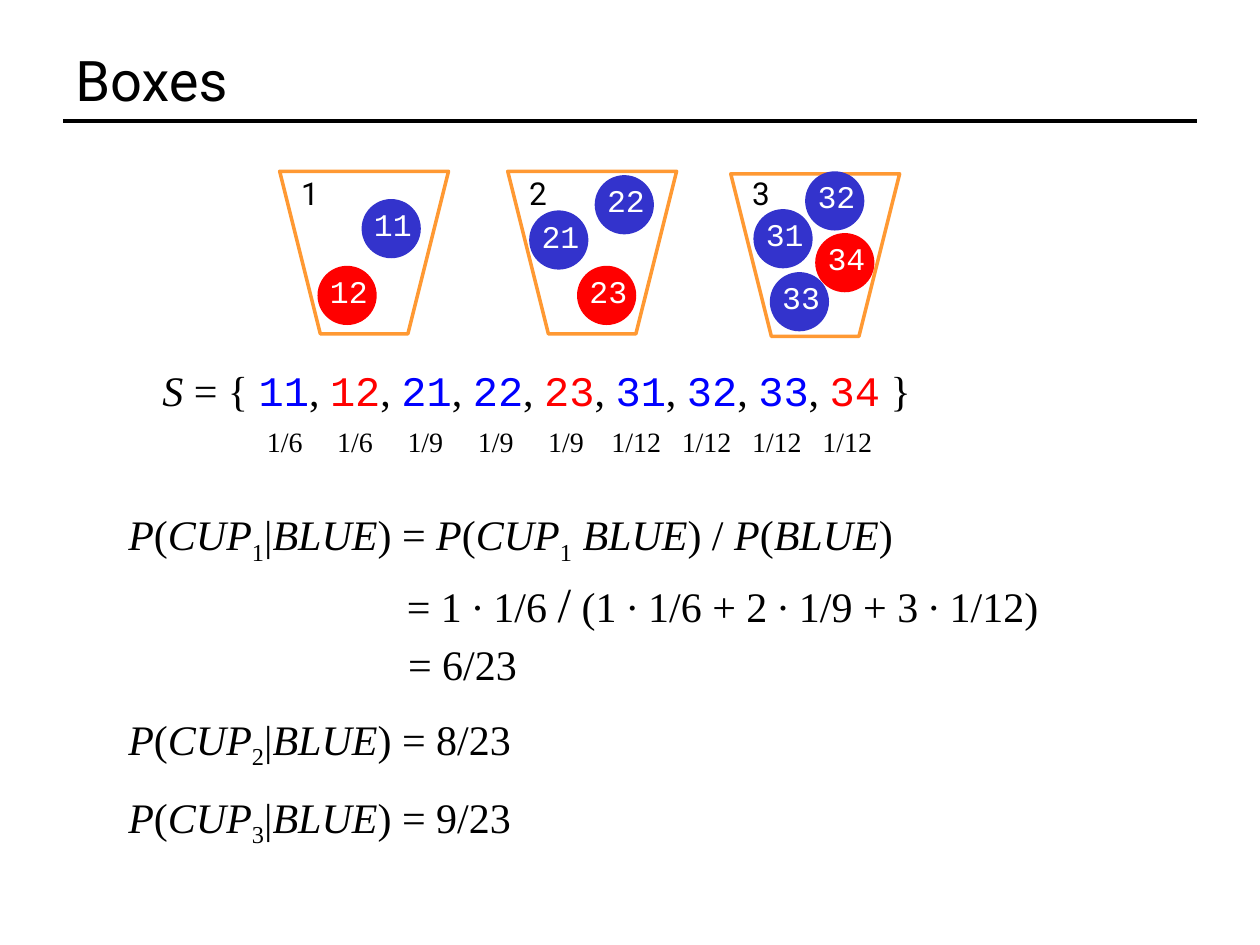
import pptx
import pptx.dml.color
import pptx.enum.shapes
import pptx.enum.text
import pptx.oxml.ns
import pptx.util
from lxml import etree

COLUMNS, ROWS = 100, 75
UNIT = pptx.util.Inches(0.1)
SANS, SERIF, MONO = "Roboto", "Times New Roman", "Courier New"
BLACK, WHITE, ORANGE = "000000", "FFFFFF", "FF9933"
BALL_RED, BALL_BLUE, TEXT_RED, TEXT_BLUE = "FF0000", "3333CC", "FF0000", "0000FF"
BALL_SIZE = 4.7

CUPS = [
    (22.2, 13.6, [("11", 28.7, 15.8, False), ("12", 25.2, 21.1, True)]),
    (40.3, 13.6, [("21", 42.0, 16.7, False), ("22", 47.2, 13.9, False),
                  ("23", 45.8, 21.1, True)]),
    (58.0, 13.8, [("31", 59.8, 16.6, False), ("32", 63.9, 13.6, False),
                  ("33", 61.1, 21.6, False), ("34", 64.7, 18.5, True)]),
]


def colour(code):
    return pptx.dml.color.RGBColor.from_string(code)


def grid(*lengths):
    return [round(length * UNIT) for length in lengths]


def add_span(para, text, size=24, font=SERIF, code=BLACK, italic=False, base=None):
    span = para.add_run()
    span.text = text
    span.font.size = pptx.util.Pt(size)
    span.font.name = font
    span.font.italic = italic
    span.font.color.rgb = colour(code)
    if base:
        span.font._element.set("baseline", str(base * 1000))


def add_text(page, place, spans):
    box = page.shapes.add_textbox(*grid(*place))
    frame = box.text_frame
    frame.word_wrap = False
    frame.auto_size = pptx.enum.text.MSO_AUTO_SIZE.SHAPE_TO_FIT_TEXT
    for text, style in spans:
        add_span(frame.paragraphs[0], text, **style)
    return box


def add_figure(page, kind, place, fill=None, line=None):
    figure = page.shapes.add_shape(kind, *grid(*place))
    figure.shadow.inherit = False
    if fill:
        figure.fill.solid()
        figure.fill.fore_color.rgb = colour(fill)
    else:
        figure.fill.background()
    if line:
        figure.line.color.rgb = colour(line)
        figure.line.width = pptx.util.Pt(2)
    else:
        figure.line.fill.background()
    return figure


def add_title(page, text):
    box = page.shapes.add_textbox(*grid(5, 3, 90, 6.6))
    box.text_frame.word_wrap = True
    box.text_frame.vertical_anchor = pptx.enum.text.MSO_ANCHOR.MIDDLE
    add_span(box.text_frame.paragraphs[0], text, 32, SANS)
    rule = page.shapes.add_connector(
        pptx.enum.shapes.MSO_CONNECTOR.STRAIGHT, *grid(5, 9.6, 95, 9.6))
    rule.line.color.rgb = colour(BLACK)
    rule.line.width = pptx.util.Pt(2)
    etree.SubElement(rule._element.spPr, pptx.oxml.ns.qn("a:effectLst"))


def add_cup(page, number, left, top, balls):
    shapes = pptx.enum.shapes.MSO_SHAPE
    cup = add_figure(page, shapes.TRAPEZOID, (left, top, 13.4, 12.9), line=ORANGE)
    cup._element.spPr.xfrm.set("flipV", "1")
    for label, column, row, red in balls:
        add_figure(page, shapes.OVAL, (column, row, BALL_SIZE, BALL_SIZE),
                   fill=BALL_RED if red else BALL_BLUE)
        add_text(page, (column, row, 5, 4),
                 [(label, dict(size=18, font=MONO, code=WHITE))])
    tag = add_figure(page, shapes.OVAL, (left - 0.1, 12.8, 5, 5))
    tag.text_frame.word_wrap = False
    tag.text_frame.vertical_anchor = pptx.enum.text.MSO_ANCHOR.MIDDLE
    para = tag.text_frame.paragraphs[0]
    para.alignment = pptx.enum.text.PP_ALIGN.CENTER
    add_span(para, str(number), 18, SANS)


def add_sample_space(page):
    outcomes = [(label, red, len(balls))
                for _, _, balls in CUPS for label, _, _, red in balls]
    spans = [("S", dict(italic=True)), (" = { ", {})]
    for index, (label, red, count) in enumerate(outcomes):
        if index:
            spans.append((", ", {}))
        spans.append((label, dict(font=MONO, code=TEXT_RED if red else TEXT_BLUE)))
        chance = f"1/{len(CUPS) * count}"
        width = 5.2 if len(chance) == 3 else 6.3
        center = 22.8 + 5.58 * index
        add_text(page, (center - width / 2, 33.2, width, 3.7),
                 [(chance, dict(size=16))])
    spans.append((" }", {}))
    add_text(page, (11.9, 28.4, 61.7, 5), spans)


def cup_event(number):
    return [("P", dict(italic=True)), ("(", {}), ("CUP", dict(italic=True)),
            (str(number), dict(base=-25))]


def given_blue(number, ending):
    return cup_event(number) + [("|", {}), ("BLUE", dict(italic=True)), (ending, {})]


def add_formulas(page):
    joint = cup_event(1) + [
        (" BLUE", dict(italic=True)), (") / ", {}), ("P", dict(italic=True)),
        ("(", {}), ("BLUE", dict(italic=True)), (")", {})]
    add_text(page, (9.2, 39.9, 65.5, 5), given_blue(1, ") = ") + joint)
    add_text(page, (31.3, 45, 55.5, 5.7), [
        ("= 1 ∙ 1/6 ", {}), ("/", dict(size=28)),
        (" (1 ∙ 1/6 + 2 ∙ 1/9 + 3 ∙ 1/12)", {})])
    add_text(page, (31.4, 50.2, 11.5, 5), [("= 6/23", {})])
    for number, row, result in [(2, 56.1, "8/23"), (3, 62.3, "9/23")]:
        add_text(page, (9.2, row, 34.1, 5), given_blue(number, f") = {result}"))


def main():
    deck = pptx.Presentation()
    deck.slide_width, deck.slide_height = grid(COLUMNS, ROWS)
    page = deck.slides.add_slide(deck.slide_layouts[6])
    add_title(page, "Boxes")
    for number, (left, top, balls) in enumerate(CUPS, 1):
        add_cup(page, number, left, top, balls)
    add_sample_space(page)
    add_formulas(page)
    deck.save("out.pptx")


if __name__ == "__main__":
    main()
